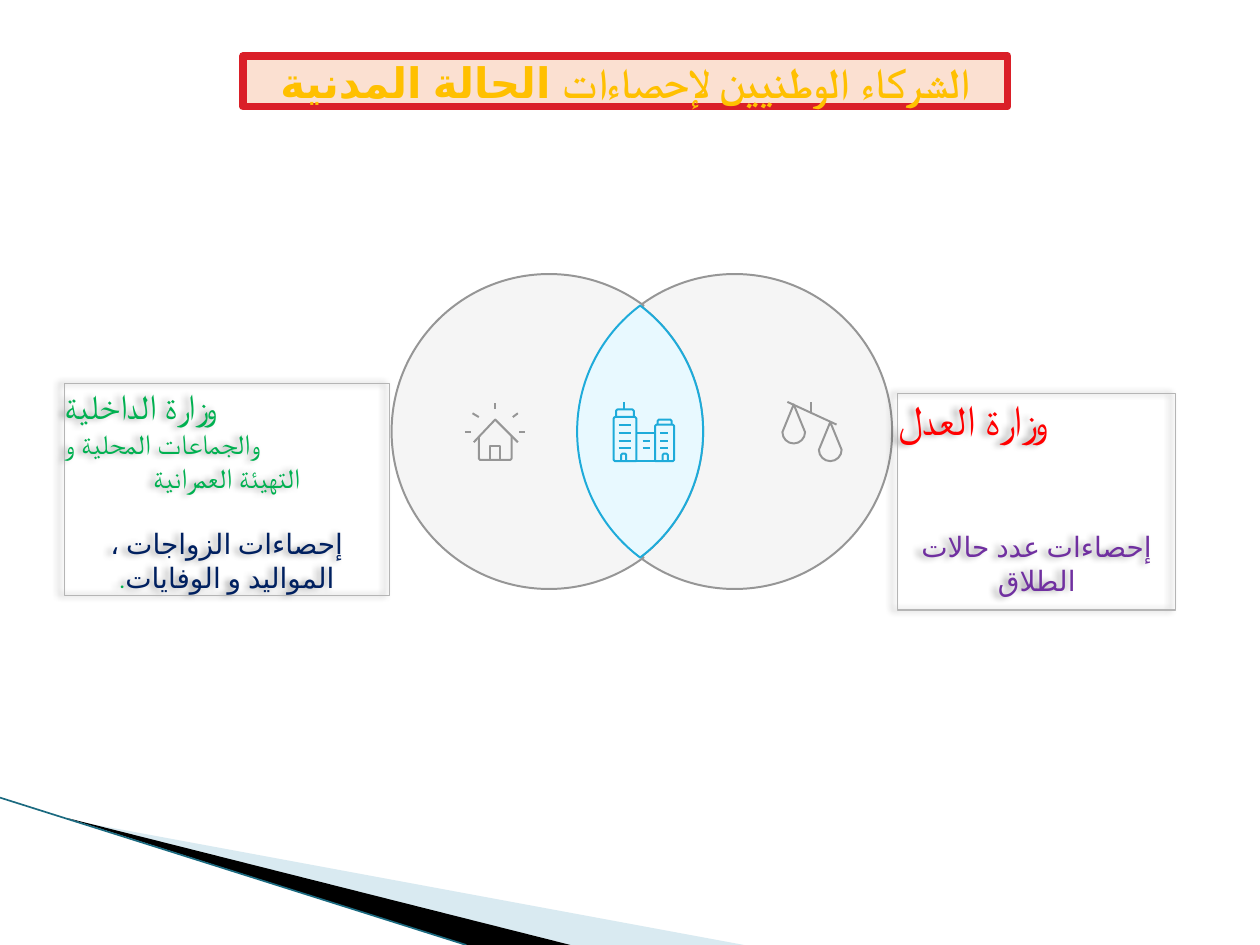
import math

import pptx
import pptx.dml.color
import pptx.enum.shapes
import pptx.enum.text
import pptx.oxml
import pptx.oxml.ns
import pptx.util
from lxml import etree

Cm = pptx.util.Cm
Pt = pptx.util.Pt
RGBColor = pptx.dml.color.RGBColor
PP_ALIGN = pptx.enum.text.PP_ALIGN
MSO_ANCHOR = pptx.enum.text.MSO_ANCHOR
qn = pptx.oxml.ns.qn

GREY = RGBColor(0x96, 0x96, 0x96)
LIGHT_GREY = RGBColor(0xF5, 0xF5, 0xF5)
BLUE = RGBColor(0x1E, 0xAB, 0xDA)
LIGHT_BLUE = RGBColor(0xE8, 0xF9, 0xFF)
PALE_BLUE = RGBColor(0xA0, 0xCB, 0xDC)
TEAL = RGBColor(0x1B, 0x6A, 0x80)
BLACK = RGBColor(0x00, 0x00, 0x00)
PEACH = RGBColor(0xFB, 0xE0, 0xD1)
RED_BORDER = RGBColor(0xDA, 0x1F, 0x28)
BOX_BORDER = RGBColor(0xB5, 0xB5, 0xB5)
AMBER = RGBColor(0xFF, 0xC0, 0x00)
GREEN = RGBColor(0x00, 0xB0, 0x50)
NAVY = RGBColor(0x00, 0x20, 0x60)
RED = RGBColor(0xFF, 0x00, 0x00)
PURPLE = RGBColor(0x70, 0x30, 0xA0)
TEXT_OUTLINE = RGBColor(0xF9, 0x00, 0x0C)

TITLE = [dict(runs=[("الشركاء الوطنيين لإحصاءات ", 24, AMBER, True),
                    ("الحالة المدنية", 24, AMBER, False)])]
INTERIOR = [
    dict(runs=[("وزارة الداخلية", 20, GREEN, True)], left=True),
    dict(runs=[("والجماعات المحلية و", 16, GREEN, True)], left=True),
    dict(runs=[("التهيئة العمرانية", 16, GREEN, True)]),
    dict(runs=[("إحصاءات الزواجات ،", 16, NAVY, False)], before=19),
    dict(runs=[("المواليد و الوفايات", 16, NAVY, False), (".", 14, GREEN, False)]),
]
JUSTICE = [
    dict(runs=[("وزارة العدل", 24, RED, True)], left=True),
    dict(runs=[("إحصاءات عدد حالات الطلاق", 16, PURPLE, False)], before=49),
]
MINISTRIES = [
    ((1.3, 7.73, 6.55, 4.27), INTERIOR, MSO_ANCHOR.MIDDLE),
    ((18.1, 7.93, 5.6, 4.37), JUSTICE, MSO_ANCHOR.TOP),
]

ICON_UNIT = 0.0254
HOUSE = [
    [(406, 346), (406, 364), (405, 365), (381, 365), (380, 364), (380, 346)],
    [(376, 351), (393, 333), (411, 351)],
    [(389, 365), (397, 365), (397, 354), (389, 354), (389, 365)],
    [(393, 320), (393, 325)], [(369, 343), (374, 343)], [(375, 328), (380, 331)],
    [(412, 343), (417, 343)], [(411, 328), (407, 331)],
]
TOWERS = [
    [(505, 366), (488, 366), (487, 365), (487, 332), (488, 331), (504, 331), (505, 332), (505, 366)],
    [(489, 331), (489, 326), (490, 325), (502, 325), (503, 326), (503, 331)],
    [(495, 319), (495, 325)],
    [(520, 366), (520, 338), (521, 337), (534, 337), (535, 338), (535, 365), (534, 366), (520, 366)],
    [(522, 337), (522, 334), (523, 333), (532, 333), (533, 334), (533, 337)],
    [(505, 344), (520, 344)], [(505, 366), (520, 366)],
]
WINDOWS = [(491, 501, (337, 344, 350, 356)), (524, 530, (344, 350, 356)), (510, 516, (350, 356))]
TOWERS += [[(left, y), (right, y)] for left, right, rows in WINDOWS for y in rows]
TOWERS += [[(x, 366), (x, 361), (x + 1, 360), (x + 3, 360), (x + 4, 361), (x + 4, 366)]
           for x in (493, 526)]
BEAM = [[(664, 337), (625, 319)], [(644, 328), (644, 319)]]


def arc(center_x, center_y, radius, *angles):
    def at(angle, tangent=0):
        cosine, sine = math.cos(angle), math.sin(angle)
        return (center_x + radius * (cosine - tangent * sine),
                center_y + radius * (sine + tangent * cosine))

    turns = [math.radians(angle) for angle in angles]
    segments = [at(turns[0])]
    for start, end in zip(turns, turns[1:]):
        reach = 4 / 3 * math.tan((end - start) / 4)
        segments.append((at(start, reach), at(end, -reach), at(end)))
    return segments


def pan(x, y):
    return [(x, y - 22)] + arc(x, y, 9, 0, 90, 180) + [(x, y - 22)]


def paint(shape, fill=None, line=None, width=1.12):
    shape.shadow.inherit = False
    if fill is None:
        shape.fill.background()
    else:
        shape.fill.solid()
        shape.fill.fore_color.rgb = fill
    if line is None:
        shape.line.fill.background()
    else:
        shape.line.color.rgb = line
        shape.line.width = Pt(width)


def draw(slide, contours, unit=1, closed=False, **style):
    def place(point):
        return tuple(Cm(value * unit) for value in point)

    builder, curved = None, []
    for start, *segments in contours:
        if builder is None:
            builder = slide.shapes.build_freeform(*place(start), scale=1.0)
        else:
            builder.move_to(*place(start))
        for segment in segments:
            is_curve = len(segment) == 3
            points = segment if is_curve else [segment]
            builder.add_line_segments([place(point) for point in points], close=False)
            curved.append(is_curve)
        if closed:
            builder.add_line_segments([], close=True)
    shape = builder.convert_to_shape()
    steps = iter(list(shape._element.iter(qn("a:lnTo"))))
    for is_curve in curved:
        step = next(steps)
        if is_curve:
            step.tag = qn("a:cubicBezTo")
            for _ in range(2):
                extra = next(steps)
                step.append(extra[0])
                extra.getparent().remove(extra)
    paint(shape, **style)
    return shape


def add_text(paragraph, text, size=16, color=BLACK, font="Roboto", bold=False, complex_font=True):
    run = paragraph.add_run()
    run.text = text
    run.font.size = Pt(size)
    run.font.bold = bold
    run.font.color.rgb = color
    run.font.name = font
    if complex_font:
        etree.SubElement(run.font._element, qn("a:cs"), typeface=font)
    else:
        run.font._element.set("lang", "ar-DZ")
    return run


def add_box(slide, bounds, paragraphs, font="Roboto", bold=False, anchor=MSO_ANCHOR.MIDDLE, **style):
    shape = slide.shapes.add_shape(pptx.enum.shapes.MSO_SHAPE.RECTANGLE, *map(Cm, bounds))
    paint(shape, **style)
    frame = shape.text_frame
    frame.word_wrap = True
    frame.vertical_anchor = anchor
    frame.margin_left = frame.margin_right = frame.margin_top = frame.margin_bottom = 0
    for index, content in enumerate(paragraphs):
        paragraph = frame.add_paragraph() if index else frame.paragraphs[0]
        if content.get("left"):
            paragraph.alignment = PP_ALIGN.LEFT
        else:
            paragraph.alignment = PP_ALIGN.CENTER
            paragraph._p.get_or_add_pPr().set("rtl", "1")
        if "before" in content:
            paragraph.space_before = Pt(content["before"])
        for text, size, color, complex_font in content["runs"]:
            add_text(paragraph, text, size=size, color=color, font=font, bold=bold,
                     complex_font=complex_font)
    return shape


def add_shadow(shape):
    effects = shape._element.spPr.find(qn("a:effectLst"))
    shadow = etree.SubElement(effects, qn("a:outerShdw"), blurRad=str(Pt(4)),
                              dist=str(Pt(3)), dir="10800000", rotWithShape="0")
    color = etree.SubElement(shadow, qn("a:srgbClr"), val=str(BLACK))
    etree.SubElement(color, qn("a:alpha"), val="40000")


def add_corner(slide):
    wedge = draw(slide, [[(1.4, 16.53), (15.0, 19.05), (11.5, 19.05)]], closed=True, fill=PALE_BLUE)
    color = wedge._element.spPr.find(qn("a:solidFill"))[0]
    etree.SubElement(color, qn("a:alpha"), val="40000")
    draw(slide, [[(1.35, 16.49), (11.5, 19.05), (9.4, 19.05)]], closed=True, fill=BLACK)
    edge = slide.shapes.add_connector(pptx.enum.shapes.MSO_CONNECTOR.STRAIGHT,
                                      Cm(0), Cm(16.08), Cm(9.4), Cm(19.05))
    edge.line.color.rgb = TEAL
    edge.line.width = Pt(0.95)
    etree.SubElement(edge._element.spPr, qn("a:effectLst"))


def add_venn(slide):
    radius, y = 3.175, 8.7
    half = math.degrees(math.acos(0.6))
    left_x, right_x, shift = 11.0, 14.81, 0.07
    crescents = [
        arc(right_x, y, radius, half - 180, -90, 0, 90, 180 - half)
        + arc(left_x, y, radius, half, 0, -half)[1:],
        arc(left_x + shift, y, radius, half, 90, 180, 270, 360 - half)
        + arc(right_x + shift, y, radius, 180 + half, 180, 180 - half)[1:],
    ]
    for crescent in crescents:
        draw(slide, [crescent], closed=True, fill=LIGHT_GREY, line=GREY)
    lens = (arc(left_x, y, radius, -half, 0, half)
            + arc(right_x, y, radius, 180 - half, 180, 180 + half)[1:])
    draw(slide, [lens], closed=True, fill=LIGHT_BLUE, line=BLUE)


def main():
    presentation = pptx.Presentation()
    presentation.slide_width, presentation.slide_height = Cm(25.4), Cm(19.05)
    slide = presentation.slides.add_slide(presentation.slide_layouts[6])
    add_corner(slide)
    add_venn(slide)
    title = add_box(slide, (4.9, 1.13, 15.41, 1.02), TITLE, font="Arial", bold=True,
                    fill=PEACH, line=RED_BORDER, width=4.33)
    for run in title.text_frame.paragraphs[0].runs:
        outline = etree.Element(qn("a:ln"), w=str(Pt(1.42)))
        solid = etree.SubElement(outline, qn("a:solidFill"))
        etree.SubElement(solid, qn("a:srgbClr"), val=str(TEXT_OUTLINE))
        run.font._element.insert(0, outline)
    for bounds, paragraphs, anchor in MINISTRIES:
        add_shadow(add_box(slide, bounds, paragraphs, anchor=anchor, line=BOX_BORDER, width=0.75))
    scales = [pan(659, 357), pan(630, 343)] + BEAM
    for icon, color in ((HOUSE, GREY), (TOWERS, BLUE), (scales, GREY)):
        draw(slide, icon, unit=ICON_UNIT, line=color)
    presentation.save("out.pptx")


if __name__ == "__main__":
    main()
